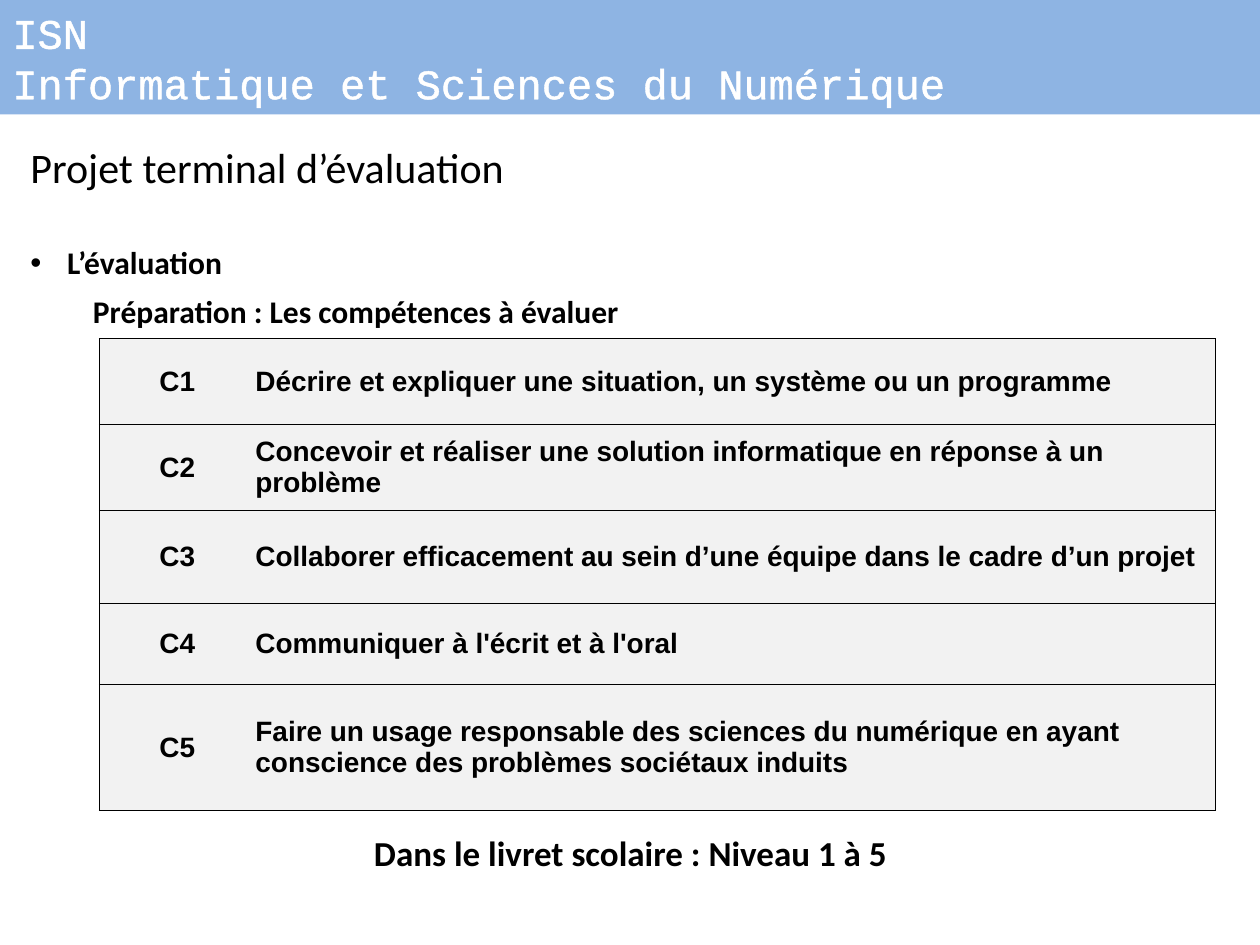
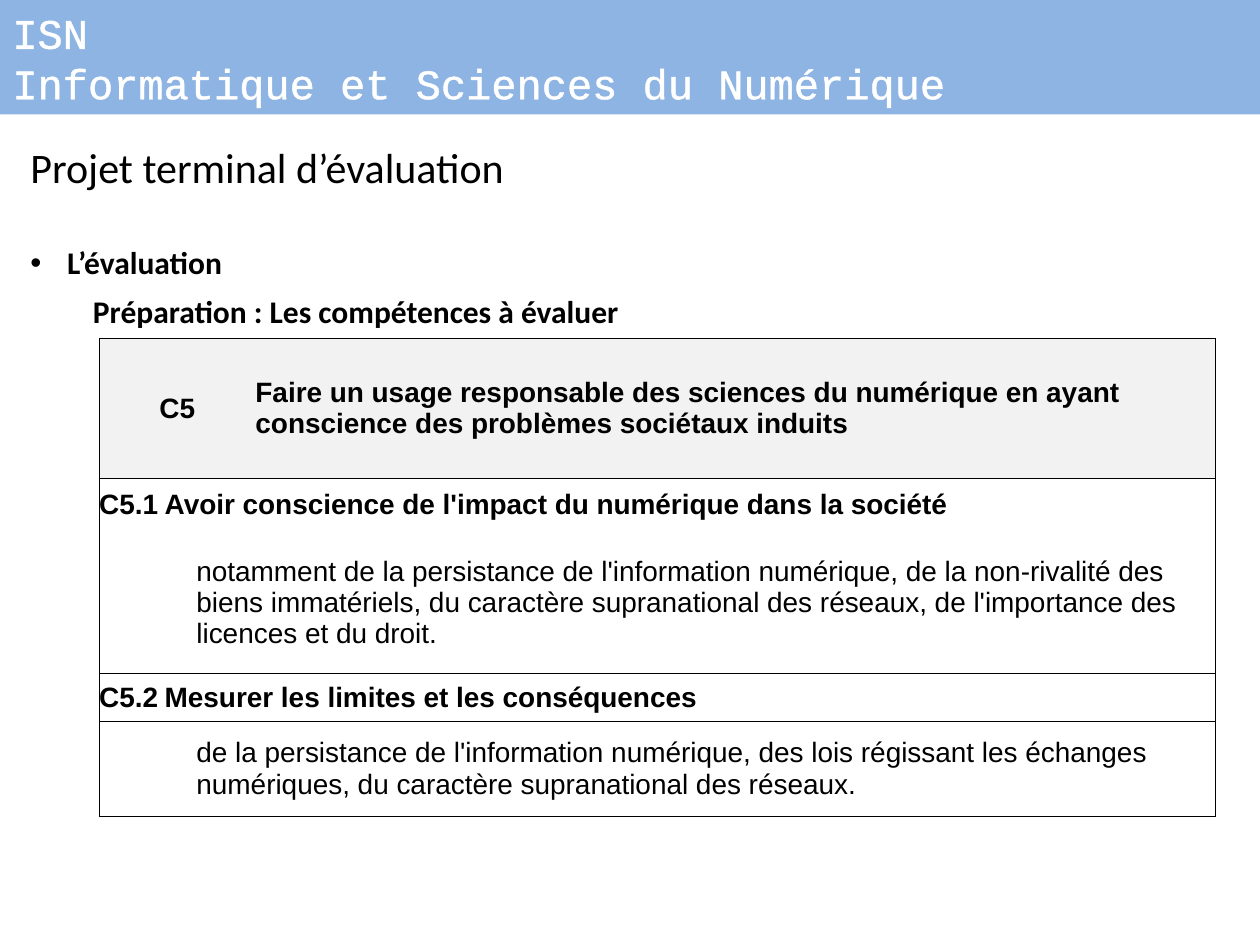
from collections import namedtuple

from lxml import etree
from pptx import Presentation
from pptx.dml.color import RGBColor
from pptx.enum.shapes import MSO_SHAPE
from pptx.enum.text import MSO_ANCHOR, MSO_AUTO_SIZE, PP_ALIGN
from pptx.oxml.ns import qn
from pptx.util import Cm, Pt

RECTANGLE = MSO_SHAPE.RECTANGLE
LEFT, CENTER = PP_ALIGN.LEFT, PP_ALIGN.CENTER
TOP, MIDDLE = MSO_ANCHOR.TOP, MSO_ANCHOR.MIDDLE
NO_AUTOFIT = MSO_AUTO_SIZE.NONE

BAND_BLUE = RGBColor(0x8E, 0xB4, 0xE3)
WHITE = RGBColor(0xFF, 0xFF, 0xFF)
BLACK = RGBColor(0, 0, 0)
LIGHT_GREY = RGBColor(0xF2, 0xF2, 0xF2)

BAND_FONT, TEXT_FONT, TABLE_FONT = "Courier New", "Calibri", "Arial"
PLAIN_TABLE_STYLE = "{2D5ABB26-0587-4C30-8999-92F81FD0307C}"

SLIDE_WIDTH, SLIDE_HEIGHT = Cm(25.4), Cm(19.05)
BAND_BOX = (0, 0, SLIDE_WIDTH, Cm(2.31))
HEADING_BOX = (Cm(0.36), Cm(2.72), Cm(25.04), Cm(4.6))
TABLE_LEFT, TABLE_TOP = Cm(2), Cm(6.83)
COMPETENCE_COLUMNS = (Cm(3.15), Cm(19.35))
DETAIL_COLUMNS = (Cm(1.32), Cm(21.18))
LEVEL_BOX = (Cm(7.29), Cm(16.64), Cm(10.95), Cm(1.12))

Row = namedtuple("Row", "label text height fill edges bold indent label_alignment")

RESPONSIBLE_USE = ("C5", "Faire un usage responsable des sciences du numérique en ayant "
                         "conscience des problèmes sociétaux induits")
COMPETENCES = (
    ("C1", "Décrire et expliquer une situation, un système ou un programme", Cm(1.73)),
    ("C2", "Concevoir et réaliser une solution informatique en réponse à un problème", Cm(1.73)),
    ("C3", "Collaborer efficacement au sein d’une équipe dans le cadre d’un projet", Cm(1.88)),
    ("C4", "Communiquer à l'écrit et à l'oral", Cm(1.63)),
    (*RESPONSIBLE_USE, Cm(2.54)),
)
RESPONSIBLE_USE_HEIGHT = Cm(2.81)


def competence_row(label, text, height):
    return Row(label, text, height, LIGHT_GREY, "TB", True, 0, CENTER)


def detail_heading(label, text, height):
    return Row(label, text, height, WHITE, "T", True, 0, LEFT)


def detail_text(text, height):
    return Row("", text, height, WHITE, "B", False, Cm(0.64), LEFT)


DETAILS = (
    detail_heading("C5.1", "Avoir conscience de l'impact du numérique dans la société", Cm(1.07)),
    detail_text("notamment de la persistance de l'information numérique, de la non-rivalité des "
                "biens immatériels, du caractère supranational des réseaux, de l'importance des "
                "licences et du droit.", Cm(2.87)),
    detail_heading("C5.2", "Mesurer les limites et les conséquences", Cm(0.97)),
    detail_text("de la persistance de l'information numérique, des lois régissant les échanges "
                "numériques, du caractère supranational des réseaux.", Cm(1.9)),
)


def set_font(paragraph, name, size, color=BLACK, bold=False):
    font = paragraph.font
    font.name, font.size, font.bold = name, Pt(size), bold
    font.color.rgb = color


def solid_line(tag, width, color):
    line = etree.Element(qn(tag), w=str(int(width)))
    fill = etree.SubElement(line, qn("a:solidFill"))
    etree.SubElement(fill, qn("a:srgbClr"), val=str(color))
    return line


def place(shape, left, top, width, height):
    shape.left, shape.top, shape.width, shape.height = left, top, width, height


def add_band(slide, box):
    band = slide.shapes.add_shape(RECTANGLE, *box)
    band.shadow.inherit = False
    band.fill.solid()
    band.fill.fore_color.rgb = BAND_BLUE
    band.line.fill.background()
    frame = band.text_frame
    frame.text = "ISN\nInformatique et Sciences du Numérique"
    for paragraph in frame.paragraphs:
        paragraph.alignment = LEFT
        set_font(paragraph, BAND_FONT, 24, WHITE)
        properties = paragraph.runs[0]._r.get_or_add_rPr()
        properties.insert(0, solid_line("a:ln", Pt(1.45), WHITE))


def fill_placeholder(placeholder, box, text):
    place(placeholder, *box)
    frame = placeholder.text_frame
    frame.text = text
    frame.word_wrap = True
    frame.auto_size = NO_AUTOFIT
    frame.vertical_anchor = TOP
    return frame.paragraphs


def set_bullet(paragraph, margin, hanging, character=None):
    properties = paragraph._p.get_or_add_pPr()
    properties.set("marL", str(int(margin)))
    properties.set("indent", str(-int(hanging)))
    if character:
        bullet = etree.Element(qn("a:buChar"), char=character)
    else:
        bullet = etree.Element(qn("a:buNone"))
    properties.insert_element_before(bullet, "a:tabLst", "a:defRPr", "a:extLst")


def add_heading(slide, box):
    left, top, width, height = box
    title_height = Cm(1.3)
    list_offset = Cm(2.06)
    title, = fill_placeholder(slide.shapes.title, (left, top, width, title_height),
                              "Projet terminal d’évaluation")
    title.alignment = LEFT
    set_font(title, TEXT_FONT, 24)

    topic, step = fill_placeholder(
        slide.placeholders[1], (left, top + list_offset, width, height - list_offset),
        "L’évaluation\nPréparation : Les compétences à évaluer")
    step.level = 1
    for paragraph, space in ((topic, 0), (step, 6)):
        paragraph.space_before = Pt(space)
        set_font(paragraph, TEXT_FONT, 18, bold=True)
    set_bullet(topic, Cm(0.74), Cm(0.74), "•")
    set_bullet(step, Cm(2), Cm(0.74))


def format_cell(cell, text, row, edges, alignment=LEFT, indent=0):
    cell.text = text
    cell.vertical_anchor = MIDDLE
    cell.margin_left = indent
    cell.margin_top = cell.margin_right = cell.margin_bottom = 0
    cell.fill.solid()
    cell.fill.fore_color.rgb = row.fill
    paragraph = cell.text_frame.paragraphs[0]
    paragraph.alignment = alignment
    set_font(paragraph, TABLE_FONT, 16, bold=row.bold)
    properties = cell._tc.get_or_add_tcPr()
    for position, edge in enumerate(edges):
        properties.insert(position, solid_line("a:ln" + edge, Pt(0.5), BLACK))


def add_ruled_table(slide, left, top, column_widths, rows):
    height = sum(row.height for row in rows)
    table = slide.shapes.add_table(len(rows), len(column_widths), left, top,
                                   sum(column_widths), height).table
    table.first_row = table.horz_banding = False
    table._tbl.tblPr.find(qn("a:tableStyleId")).text = PLAIN_TABLE_STYLE
    for column, width in zip(table.columns, column_widths):
        column.width = width
    for index, row in enumerate(rows):
        table.rows[index].height = row.height
        format_cell(table.cell(index, 0), row.label, row, "L" + row.edges, row.label_alignment)
        format_cell(table.cell(index, 1), row.text, row, "R" + row.edges, indent=row.indent)
    return top + height


def add_level_note(slide, box):
    frame = slide.shapes.add_textbox(*box).text_frame
    frame.word_wrap = False
    frame.text = "Dans le livret scolaire : Niveau 1 à 5"
    set_font(frame.paragraphs[0], TEXT_FONT, 20, bold=True)


def add_evaluation_slide(presentation):
    slide = presentation.slides.add_slide(presentation.slide_layouts[1])
    add_band(slide, BAND_BOX)
    add_heading(slide, HEADING_BOX)
    return slide


def add_competences_slide(presentation):
    slide = add_evaluation_slide(presentation)
    rows = [competence_row(*competence) for competence in COMPETENCES]
    add_ruled_table(slide, TABLE_LEFT, TABLE_TOP, COMPETENCE_COLUMNS, rows)
    add_level_note(slide, LEVEL_BOX)


def add_responsible_use_slide(presentation):
    slide = add_evaluation_slide(presentation)
    rows = [competence_row(*RESPONSIBLE_USE, RESPONSIBLE_USE_HEIGHT)]
    bottom = add_ruled_table(slide, TABLE_LEFT, TABLE_TOP, COMPETENCE_COLUMNS, rows)
    add_ruled_table(slide, TABLE_LEFT, bottom, DETAIL_COLUMNS, DETAILS)


def main():
    presentation = Presentation()
    presentation.slide_width, presentation.slide_height = SLIDE_WIDTH, SLIDE_HEIGHT
    add_competences_slide(presentation)
    add_responsible_use_slide(presentation)
    presentation.save("out.pptx")


if __name__ == "__main__":
    main()
